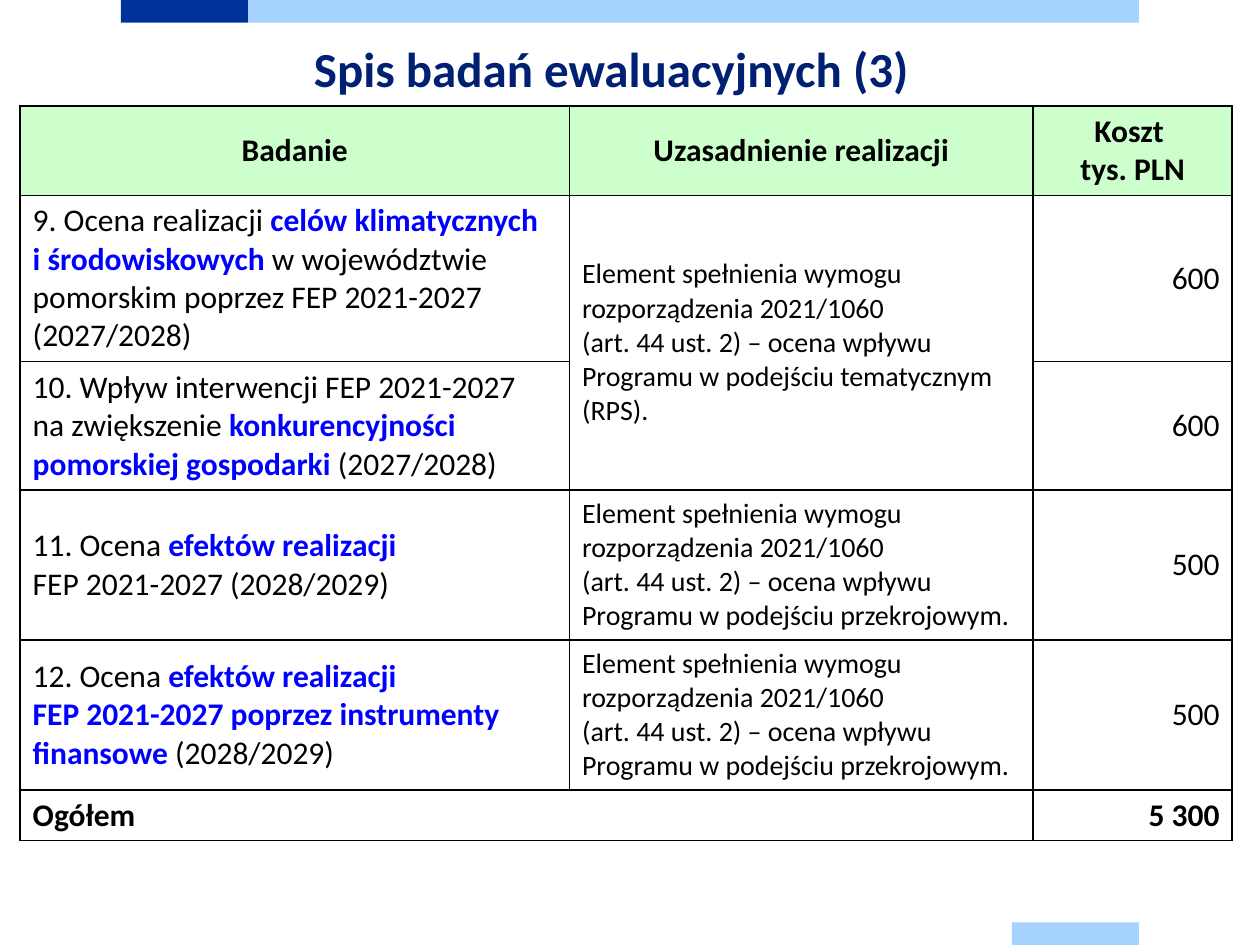
from lxml.etree import SubElement
from pptx import Presentation
from pptx.dml.color import RGBColor
from pptx.enum.shapes import MSO_SHAPE
from pptx.enum.text import MSO_ANCHOR, PP_ALIGN
from pptx.oxml.ns import qn
from pptx.util import Inches, Pt

NAVY, SKY, INK = "003399", "A6D3FF", "002073"
BLACK, BLUE, GREEN = "000000", "0000FF", "CCFFCC"
COLS = [4.36, 3.68, 1.58]
HEIGHTS = [0.71, 1.32, 1.02, 1.19, 1.19, 0.4]
HEADS = ["Badanie", "Uzasadnienie realizacji", "Koszt \ntys. PLN"]
REASON = ("Element spełnienia wymogu rozporządzenia 2021/1060 \n"
          "(art. 44 ust. 2) – ocena wpływu Programu w podejściu ")
THEME = REASON + "tematycznym (RPS)."
CROSS = REASON + "przekrojowym."
# Words between asterisks are bold and blue.
STUDIES = [
    ("9. Ocena realizacji *celów klimatycznych \ni środowiskowych* w województwie "
     "pomorskim poprzez FEP 2021-2027 (2027/2028)", THEME, "600"),
    ("10. Wpływ interwencji FEP 2021-2027 \nna zwiększenie *konkurencyjności "
     "pomorskiej gospodarki *(2027/2028)", "", "600"),
    ("11. Ocena *efektów realizacji \n*FEP 2021-2027 (2028/2029)", CROSS, "500"),
    ("12. Ocena *efektów realizacji \nFEP 2021-2027 poprzez instrumenty "
     "finansowe *(2028/2029)", CROSS, "500"),
]


def rgb(color):
    return RGBColor.from_string(color)


def write(frame, text, size=18, color=BLACK, bold=False, align=PP_ALIGN.LEFT,
          spacing=None):
    para = frame.paragraphs[0]
    para.alignment = align
    if spacing:
        para.line_spacing = Pt(spacing)
    for i, part in enumerate(text.split("*")):
        marked = i % 2 == 1
        for j, line in enumerate(part.split("\n")):
            if j:
                para.add_line_break()
            if not line:
                continue
            run = para.add_run()
            run.text = line
            run.font.name = "Calibri"
            run.font.size = Pt(size)
            run.font.bold = bold or marked
            run.font.color.rgb = rgb(BLUE if marked else color)


def add_bar(slide, left, top, width, color):
    bar = slide.shapes.add_shape(MSO_SHAPE.RECTANGLE, Inches(left), Inches(top),
                                 Inches(width), Inches(0.18))
    bar.shadow.inherit = False
    bar.fill.solid()
    bar.fill.fore_color.rgb = rgb(color)
    bar.line.fill.background()


def add_title(slide, text):
    box = slide.shapes.add_textbox(Inches(0.17), Inches(0.27),
                                   Inches(9.36), Inches(0.57))
    frame = box.text_frame
    frame.word_wrap = True
    frame.vertical_anchor = MSO_ANCHOR.MIDDLE
    frame.margin_left = frame.margin_right = 0
    frame.margin_top = frame.margin_bottom = 0
    write(frame, text, size=28, color=INK, bold=True,
          align=PP_ALIGN.CENTER, spacing=30.8)


def style(cell, fill=None):
    """Draw black edges, then fill the cell or leave it clear."""
    props = cell._tc.get_or_add_tcPr()
    for side in ("lnL", "lnR", "lnT", "lnB"):
        edge = SubElement(props, qn("a:" + side), w=str(Pt(1)))
        paint = SubElement(edge, qn("a:solidFill"))
        SubElement(paint, qn("a:srgbClr"), val=BLACK)
    if fill:
        cell.fill.solid()
        cell.fill.fore_color.rgb = rgb(fill)
    else:
        cell.fill.background()
    cell.vertical_anchor = MSO_ANCHOR.MIDDLE


def add_grid(slide):
    table = slide.shapes.add_table(len(HEIGHTS), len(COLS), Inches(0.16),
                                   Inches(0.84), Inches(sum(COLS)),
                                   Inches(sum(HEIGHTS))).table
    for col, width in zip(table.columns, COLS):
        col.width = Inches(width)
    for row, height in zip(table.rows, HEIGHTS):
        row.height = Inches(height)
    for i, row in enumerate(table.rows):
        for cell in row.cells:
            style(cell, GREEN if i == 0 else None)
    last = len(HEIGHTS) - 1
    table.cell(1, 1).merge(table.cell(2, 1))
    table.cell(last, 0).merge(table.cell(last, 1))

    for j, head in enumerate(HEADS):
        write(table.cell(0, j).text_frame, head, bold=True, align=PP_ALIGN.CENTER)
    for i, (study, reason, cost) in enumerate(STUDIES, 1):
        write(table.cell(i, 0).text_frame, study)
        if reason:
            write(table.cell(i, 1).text_frame, reason, size=16)
        write(table.cell(i, 2).text_frame, cost, align=PP_ALIGN.RIGHT)
    write(table.cell(last, 0).text_frame, "Ogółem", bold=True)
    write(table.cell(last, 2).text_frame, "5 300", bold=True, align=PP_ALIGN.RIGHT)


def main():
    deck = Presentation()
    deck.slide_width, deck.slide_height = Inches(10), Inches(7.5)
    slide = deck.slides.add_slide(deck.slide_layouts[6])
    add_bar(slide, 0.96, 0, 1.01, NAVY)
    add_bar(slide, 1.97, 0, 7.07, SKY)
    add_bar(slide, 8.03, 7.32, 1.01, SKY)
    add_title(slide, "Spis badań ewaluacyjnych (3)")
    add_grid(slide)
    deck.save("out.pptx")


if __name__ == "__main__":
    main()
